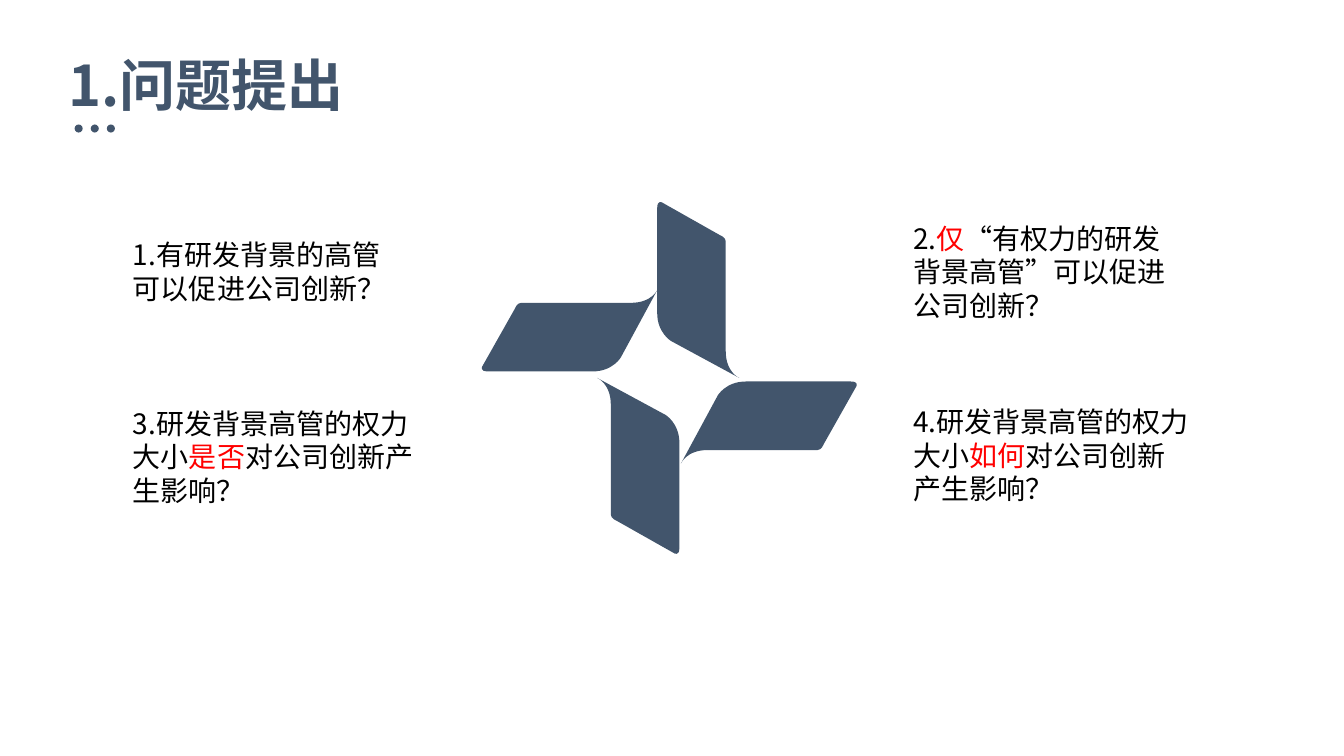
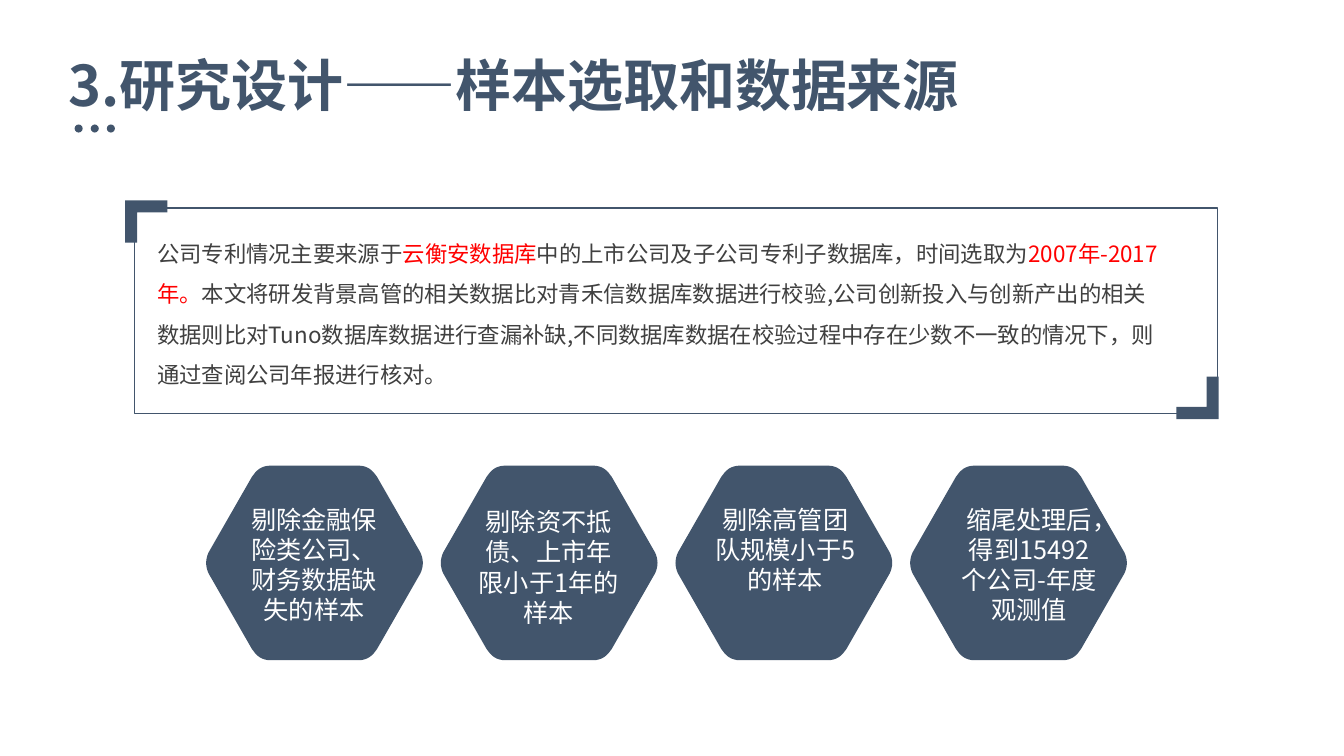
from dataclasses import dataclass

from lxml.etree import Element, SubElement
from pptx import Presentation
from pptx.dml.color import RGBColor
from pptx.enum.shapes import MSO_SHAPE as Preset
from pptx.enum.text import MSO_ANCHOR as Anchor, MSO_AUTO_SIZE as AutoSize, PP_ALIGN as Align
from pptx.oxml.ns import qn
from pptx.slide import Slide
from pptx.text.text import TextFrame
from pptx.util import Emu, Pt

CELL = 91440
COLUMNS, ROWS = 133.33, 75
FONT = "Noto Sans CJK SC"
NAVY, RED, BLACK, GRAY, WHITE = "42556C", "FF0000", "000000", "404040", "FFFFFF"
TITLE_ONLY = 5

Point = tuple[float, float]


@dataclass(frozen=True)
class Style:
    size: float
    color: str
    bold: bool = False
    align: Align = Align.LEFT
    anchor: Anchor = Anchor.TOP
    spacing: float = 1.0
    inset: Point = (1, 0.5)


@dataclass(frozen=True)
class Note:
    column: float
    row: float
    width: float
    height: float
    text: str


@dataclass(frozen=True)
class Filter:
    text: str
    shift: Point = (0, 0)


@dataclass(frozen=True)
class Outline:
    points: list[Point]
    kinds: str


TITLE = Style(40, NAVY, bold=True, inset=(0, 0))
QUESTION = Style(20, BLACK, anchor=Anchor.MIDDLE)
SOURCE = Style(16, GRAY, spacing=1.5)
FILTER = Style(18, WHITE, align=Align.CENTER, inset=(0, 0))

QUESTIONS = [
    Note(12.2, 22.7, 27.8, 8.4, "1.有研发背景的高管可以促进公司创新？"),
    Note(12.2, 41.1, 31.3, 8.4, "3.研发背景高管的权力大小|是否|对公司创新产生影响？"),
    Note(89.6, 22.75, 29, 8.4, "2.|仅|“有权力的研发背景高管”可以促进公司创新？"),
    Note(89.6, 40.95, 29.4, 8.4, "4.研发背景高管的权力大小|如何|对公司创新产生影响？"),
]

DATA_SOURCE = Note(
    14.6, 22, 102.1, 16.7,
    "公司专利情况主要来源于|云衡安数据库|中的上市公司及子公司专利子数据库，时间选取为|2007年-2017年。|"
    "本文将研发背景高管的相关数据比对青禾信数据库数据进行校验,公司创新投入与创新产出的相关数据则比对"
    "Tuno数据库数据进行查漏补缺,不同数据库数据在校验过程中存在少数不一致的情况下，则通过查阅公司年报进行核对。",
)

FILTERS = [
    Filter("剔除金融保险类公司、财务数据缺失的样本"),
    Filter("剔除资不抵债、上市年限小于1年的样本", (0, 0.25)),
    Filter("剔除高管团队规模小于5的样本", (0.2, 0)),
    Filter("缩尾处理后，得到15492个公司-年度观测值", (1.1, 0)),
]

BLADE_TIPS = [(65.25, 28.7), (73.35, 37.5), (67.55, 46), (59.25, 37.5)]
BLADE = Outline(
    [
        (0, 0), (0, 0), (-0.55, 1.35), (-2.65, 1.35),
        (-13.55, 1.35),
        (-13.95, 1.35), (-14.15, 1.9), (-14.15, 1.9),
        (-17.4, 7.65),
        (-17.4, 7.65), (-17.7, 8.15), (-16.85, 8.15),
        (-6.45, 8.15),
        (-4.45, 8.15), (-3.65, 6.75), (-3.65, 6.75),
    ],
    "CLCLCLC",
)

HEXAGON_WIDTH, HEXAGON_HEIGHT = 21.5, 19.3
HEXAGON_LEFT, HEXAGON_TOP, HEXAGON_PITCH = 20.45, 46.2, 23.28
HEXAGON_QUARTER: list[Point] = [
    (0, HEXAGON_HEIGHT / 2), (0, 9.3), (0.1, 8.9), (0.25, 8.6),
    (4.55, 1.1),
    (4.75, 0.8), (5, 0.5), (5.3, 0.3),
    (5.6, 0.1), (6, 0), (6.35, 0),
]

BRACKET_ARM, BRACKET_THICK = 4.2, 1.2
BRACKET = Outline(
    [
        (0, 0), (BRACKET_ARM, 0), (BRACKET_ARM, BRACKET_THICK),
        (BRACKET_THICK, BRACKET_THICK), (BRACKET_THICK, BRACKET_ARM), (0, BRACKET_ARM),
    ],
    "LLLLL",
)


def cells(count: float) -> Emu:
    return Emu(round(count * CELL))


def color(value: str) -> RGBColor:
    return RGBColor.from_string(value)


def hexagon_outline() -> Outline:
    top = HEXAGON_QUARTER + [(HEXAGON_WIDTH - x, y) for x, y in reversed(HEXAGON_QUARTER)]
    bottom = [(x, HEXAGON_HEIGHT - y) for x, y in reversed(top)]
    return Outline(top + bottom[1:], "CLCCLCCLC" * 2)


def fill_shape(shape) -> None:
    shape.shadow.inherit = False
    shape.fill.solid()
    shape.fill.fore_color.rgb = color(NAVY)
    shape.line.fill.background()


def bend_edges(shape, kinds: str) -> None:
    edges = iter(list(shape._element.iter(qn("a:lnTo"))))
    for kind in kinds:
        first = next(edges)
        if kind == "C":
            curve = Element(qn("a:cubicBezTo"))
            first.addprevious(curve)
            for edge in (first, next(edges), next(edges)):
                curve.append(edge[0])
                edge.getparent().remove(edge)


def draw_outline(page: Slide, origin: Point, outline: Outline, turns: int = 0) -> None:
    placed = []
    for x, y in outline.points:
        for _ in range(turns):
            x, y = -y, x
        placed.append((cells(origin[0] + x), cells(origin[1] + y)))
    builder = page.shapes.build_freeform(*placed[0])
    builder.add_line_segments(placed[1:], close=True)
    shape = builder.convert_to_shape()
    bend_edges(shape, outline.kinds)
    fill_shape(shape)


def write_text(frame: TextFrame, text: str, style: Style) -> None:
    frame.word_wrap = True
    frame.auto_size = AutoSize.NONE
    frame.vertical_anchor = style.anchor
    frame.margin_left = frame.margin_right = cells(style.inset[0])
    frame.margin_top = frame.margin_bottom = cells(style.inset[1])
    para = frame.paragraphs[0]
    para.alignment = style.align
    para.line_spacing = style.spacing
    font = para.font
    font.size = Pt(style.size)
    font.bold = style.bold
    font.color.rgb = color(style.color)
    font.name = FONT
    defaults = para._p.get_or_add_pPr().find(qn("a:defRPr"))
    SubElement(defaults, qn("a:ea")).set("typeface", FONT)
    for index, part in enumerate(text.split("|")):
        span = para.add_run()
        span.text = part
        if index % 2:
            span.font.color.rgb = color(RED)


def draw_note(page: Slide, note: Note, style: Style) -> None:
    bounds = (note.column, note.row, note.width, note.height)
    box = page.shapes.add_textbox(*map(cells, bounds))
    write_text(box.text_frame, note.text, style)


def add_page(deck, heading: str) -> Slide:
    page = deck.slides.add_slide(deck.slide_layouts[TITLE_ONLY])
    title = page.shapes.title
    title.left, title.top, title.width, title.height = map(cells, (6.8, 5, 116.5, 6.7))
    write_text(title.text_frame, heading, TITLE)
    for index in range(3):
        bounds = (7.4 + 1.6 * index, 12.35, 0.8, 0.8)
        fill_shape(page.shapes.add_shape(Preset.OVAL, *map(cells, bounds)))
    return page


def add_questions(deck) -> None:
    page = add_page(deck, "1.问题提出")
    for note in QUESTIONS:
        draw_note(page, note, QUESTION)
    for turns, tip in enumerate(BLADE_TIPS):
        draw_outline(page, tip, BLADE, turns)


def add_sample(deck) -> None:
    page = add_page(deck, "3.研究设计——样本选取和数据来源")
    frame = page.shapes.add_shape(Preset.RECTANGLE, *map(cells, (13.37, 20.65, 107.4, 20.4)))
    frame.shadow.inherit = False
    frame.fill.background()
    frame.line.color.rgb = color(NAVY)
    frame.line.width = Pt(1)
    draw_outline(page, (12.4, 19.87), BRACKET)
    draw_outline(page, (120.9, 41.57), BRACKET, turns=2)
    hexagon = hexagon_outline()
    for index, item in enumerate(FILTERS):
        left = HEXAGON_LEFT + HEXAGON_PITCH * index
        draw_outline(page, (left, HEXAGON_TOP), hexagon)
        shift_x, shift_y = item.shift
        note = Note(left + 3.6 + shift_x, 50 + shift_y, 14.2, 12.1, item.text)
        draw_note(page, note, FILTER)
    draw_note(page, DATA_SOURCE, SOURCE)


def main() -> None:
    deck = Presentation()
    deck.slide_width, deck.slide_height = cells(COLUMNS), cells(ROWS)
    add_questions(deck)
    add_sample(deck)
    deck.save("out.pptx")


if __name__ == "__main__":
    main()
